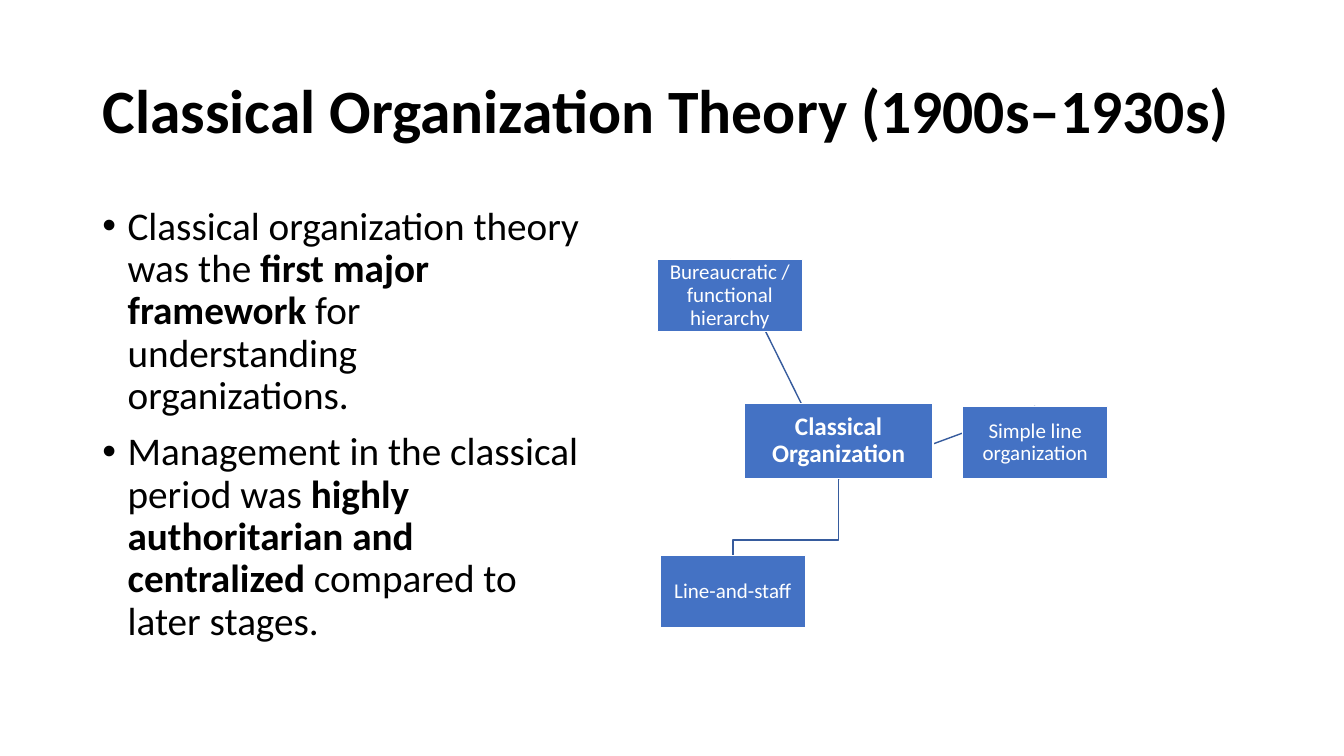
from dataclasses import dataclass

from lxml import etree
from pptx import Presentation
from pptx.dml.color import RGBColor
from pptx.enum.shapes import MSO_CONNECTOR, MSO_SHAPE
from pptx.enum.text import MSO_ANCHOR, MSO_AUTO_SIZE, PP_ALIGN
from pptx.oxml.ns import qn
from pptx.util import Pt

RECT = MSO_SHAPE.RECTANGLE
STRAIGHT = MSO_CONNECTOR.STRAIGHT
TOP, MIDDLE = MSO_ANCHOR.TOP, MSO_ANCHOR.MIDDLE
LEFT, CENTER = PP_ALIGN.LEFT, PP_ALIGN.CENTER
FIXED = MSO_AUTO_SIZE.NONE


@dataclass(frozen=True)
class Theme:
    font: str = "Calibri"
    ink: RGBColor = RGBColor(0, 0, 0)
    paper: RGBColor = RGBColor(255, 255, 255)
    fill: RGBColor = RGBColor(0x44, 0x72, 0xC4)
    link: RGBColor = RGBColor(0x36, 0x5B, 0x9D)
    title: int = 44
    body: int = 28
    hub: int = 18
    node: int = 15
    leading: float = 0.9


class Deck:
    def __init__(self, slide, theme):
        self.slide = slide
        self.theme = theme

    def style(self, para, size, color, align, bold=False):
        para.alignment = align
        para.line_spacing = self.theme.leading
        for run in para.runs:
            font = run.font
            font.name, font.size, font.bold = self.theme.font, Pt(size), bold
            font.color.rgb = color

    def place(self, holder, area, anchor):
        holder.left, holder.top, holder.width, holder.height = map(Pt, area)
        frame = holder.text_frame
        frame.word_wrap = True
        frame.auto_size = FIXED
        frame.vertical_anchor = anchor
        return frame

    def title(self, text, area):
        frame = self.place(self.slide.shapes.title, area, MIDDLE)
        frame.text = text
        self.style(frame.paragraphs[0], self.theme.title, self.theme.ink, LEFT, True)

    def bullets(self, items, area):
        frame = self.place(self.slide.placeholders[1], area, TOP)
        for i, parts in enumerate(items):
            para = frame.add_paragraph() if i else frame.paragraphs[0]
            for part in parts:
                para.add_run().text = part
            self.style(para, self.theme.body, self.theme.ink, LEFT)
            para.runs[1].font.bold = True
            para.space_before = Pt(10)
            props = para._p.get_or_add_pPr()
            props.set("marL", str(Pt(18)))
            props.set("indent", str(Pt(-18)))
            etree.SubElement(props, qn("a:buFont")).set("typeface", "Arial")
            etree.SubElement(props, qn("a:buChar")).set("char", "•")

    def box(self, text, area, size, bold=False):
        shape = self.slide.shapes.add_shape(RECT, *map(Pt, area))
        shape.shadow.inherit = False
        shape.fill.solid()
        shape.fill.fore_color.rgb = self.theme.fill
        self.stroke(shape, self.theme.paper)
        frame = shape.text_frame
        frame.word_wrap = True
        frame.vertical_anchor = MIDDLE
        frame.margin_left = frame.margin_right = Pt(0.75)
        frame.margin_top = frame.margin_bottom = Pt(0.75)
        frame.text = text
        self.style(frame.paragraphs[0], size, self.theme.paper, CENTER, bold)

    def stroke(self, shape, color):
        shape.line.color.rgb = color
        shape.line.width = Pt(1)

    def link(self, start, end):
        line = self.slide.shapes.add_connector(STRAIGHT, *map(Pt, start + end))
        etree.SubElement(line._element.spPr, qn("a:effectLst"))
        self.stroke(line, self.theme.link)

    def elbow(self, start, end, turn):
        points = [start, (start[0], turn), (end[0], turn), end]
        first, *rest = [(Pt(x), Pt(y)) for x, y in points]
        path = self.slide.shapes.build_freeform(*first)
        path.add_line_segments(rest, close=False)
        shape = path.convert_to_shape()
        shape.shadow.inherit = False
        shape.fill.background()
        self.stroke(shape, self.theme.link)


def main():
    prs = Presentation()
    prs.slide_width, prs.slide_height = Pt(960), Pt(540)
    theme = Theme()
    deck = Deck(prs.slides.add_slide(prs.slide_layouts[1]), theme)

    deck.title("Classical Organization Theory (1900s–1930s)", (66, 28.75, 828, 104.4))
    deck.bullets([
        ("Classical organization theory was the ", "first major framework",
         " for understanding organizations."),
        ("Management in the classical period was ",
         "highly authoritarian and centralized", " compared to later stages."),
    ], (66, 143.75, 355, 342.6))

    hub = (531.5, 288, 135, 54)
    wide, high = 103.7, 51.8
    nodes = [
        ("Bureaucratic / functional hierarchy", 469.5, 185.2),
        ("Simple line organization", 687.6, 290.2),
        ("Line-and-staff", 471.6, 396.7),
    ]
    root = (hub[0] + hub[2] / 2, hub[1] + hub[3])
    for _, left, top in nodes:
        end = (left + wide / 2, top)
        if top > root[1]:
            deck.elbow(root, end, top - 10.8)
        else:
            deck.link(root, end)

    deck.box("Classical Organization", hub, theme.hub, True)
    for text, left, top in nodes:
        deck.box(text, (left, top, wide, high), theme.node)

    prs.save("out.pptx")


if __name__ == "__main__":
    main()
